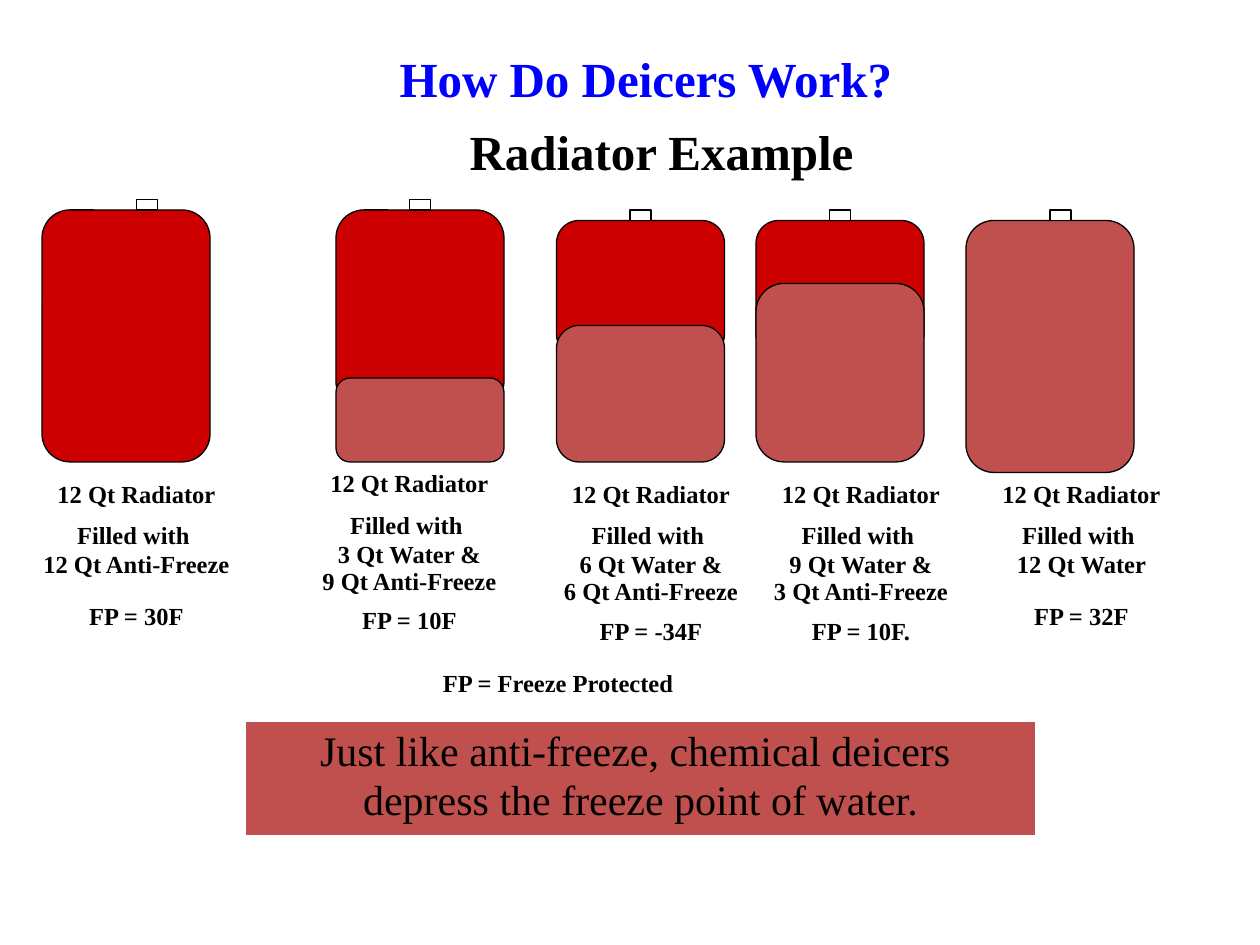
from lxml.etree import SubElement
from pptx import Presentation
from pptx.dml.color import RGBColor
from pptx.enum.shapes import MSO_SHAPE
from pptx.enum.text import MSO_ANCHOR, PP_ALIGN
from pptx.oxml.ns import qn
from pptx.util import Inches, Pt

COLORS = {"title": "0000FF", "text": "000000", "line": "000000", "cap": "FFFFFF",
          "antifreeze": "CC0000", "water": "C0504D", "border": "FFFFFF"}
FONT = "Times New Roman"

TITLE = "How Do Deicers Work?"
SUBTITLE = "Radiator Example"
LEGEND = "FP = Freeze Protected"
BANNER = ["Just like anti-freeze, chemical deicers ", "depress the freeze point of water."]

# The grid has twelve units to the inch.
UNIT = 1 / 12
TANK_WIDTH, CAP_WIDTH, CAP_HEIGHT, LABEL_WIDTH = 16, 2, 1, 26
# Fluids are (name, top, height), from back to front.
RADIATORS = [
    {"left": 4, "cap": 13, "label": (0, 45), "fluids": [("antifreeze", 20, 24)],
     "mix": ["12 Qt Anti-Freeze"], "protected": "30F"},
    {"left": 32, "cap": 39, "label": (26, 44),
     "fluids": [("antifreeze", 20, 19), ("water", 36, 8)],
     "mix": ["3 Qt Water &", "9 Qt Anti-Freeze"], "protected": "10F"},
    {"left": 53, "cap": 60, "label": (49, 45),
     "fluids": [("antifreeze", 21, 13), ("water", 31, 13)],
     "mix": ["6 Qt Water &", "6 Qt Anti-Freeze"], "protected": "-34F"},
    {"left": 72, "cap": 79, "label": (69, 45),
     "fluids": [("antifreeze", 21, 13), ("water", 27, 17)],
     "mix": ["9 Qt Water &", "3 Qt Anti-Freeze"], "protected": "10F."},
    {"left": 92, "cap": 100, "label": (90, 45), "fluids": [("water", 21, 24)],
     "mix": ["12 Qt Water"], "protected": "32F"},
]


def color(name):
    return RGBColor.from_string(COLORS[name])


def grid(*units):
    return [Inches(unit * UNIT) for unit in units]


def write(shape, lines, size, bold=True, align=PP_ALIGN.CENTER, text_color="text"):
    """Fill a shape with lines of (text, space before, line spacing), spaces in ems."""
    frame = shape.text_frame
    frame.word_wrap = True
    frame.vertical_anchor = MSO_ANCHOR.TOP
    for index, (text, before, spacing) in enumerate(lines):
        paragraph = frame.add_paragraph() if index else frame.paragraphs[0]
        paragraph.alignment = align
        paragraph.space_before = Pt(before * size)
        paragraph.line_spacing = spacing
        run = paragraph.add_run()
        run.text = text
        run.font.name, run.font.size, run.font.bold = FONT, Pt(size), bold
        run.font.color.rgb = color(text_color)


def add_block(slide, kind, box, fill, line="line", width=0.75):
    shape = slide.shapes.add_shape(kind, *box)
    shape.shadow.inherit = False
    shape.fill.solid()
    shape.fill.fore_color.rgb = color(fill)
    shape.line.color.rgb = color(line)
    shape.line.width = Pt(width)
    return shape


def add_radiator(slide, radiator):
    for fluid, top, height in radiator["fluids"]:
        box = grid(radiator["left"], top, TANK_WIDTH, height)
        add_block(slide, MSO_SHAPE.ROUNDED_RECTANGLE, box, fluid)
    cap_top = radiator["fluids"][0][1] - CAP_HEIGHT
    add_block(slide, MSO_SHAPE.RECTANGLE,
              grid(radiator["cap"], cap_top, CAP_WIDTH, CAP_HEIGHT), "cap")

    mix = radiator["mix"]
    lines = [("12 Qt Radiator", 0, 1), ("Filled with ", 0.5, 1)]
    lines += [(text, 0.5, 0.5) for text in mix]
    lines.append(("FP = " + radiator["protected"], 1 if len(mix) == 1 else 0.5, 1))
    label = slide.shapes.add_textbox(*grid(*radiator["label"], LABEL_WIDTH, 18))
    write(label, lines, 14)


def main():
    presentation = Presentation()
    presentation.slide_width, presentation.slide_height = Inches(10), Inches(7.5)
    slide = presentation.slides.add_slide(presentation.slide_layouts[5])

    title = slide.shapes.title
    title.left, title.top, title.width, title.height = grid(10, 4, 103, 7)
    write(title, [(TITLE, 0, 1)], 28, text_color="title")
    body = title.text_frame._txBody.find(qn("a:bodyPr"))
    for child in list(body):
        body.remove(child)
    SubElement(body, qn("a:noAutofit"))

    subtitle = slide.shapes.add_textbox(*grid(12, 11, 102, 8))
    write(subtitle, [(SUBTITLE, 0, 1)], 28)

    for radiator in RADIATORS:
        add_radiator(slide, radiator)

    legend = slide.shapes.add_textbox(*grid(41, 63, 37, 4))
    write(legend, [(LEGEND, 0, 1)], 14, align=PP_ALIGN.LEFT)

    banner_box = [Inches(length) for length in (1.92, 5.7, 6.33, 0.96)]
    banner = add_block(slide, MSO_SHAPE.RECTANGLE, banner_box, "water", "border", 4.5)
    write(banner, [(BANNER[0], 0, 1), (BANNER[1], 0.5, 0.5)], 24, bold=False)

    presentation.save("out.pptx")


if __name__ == "__main__":
    main()
